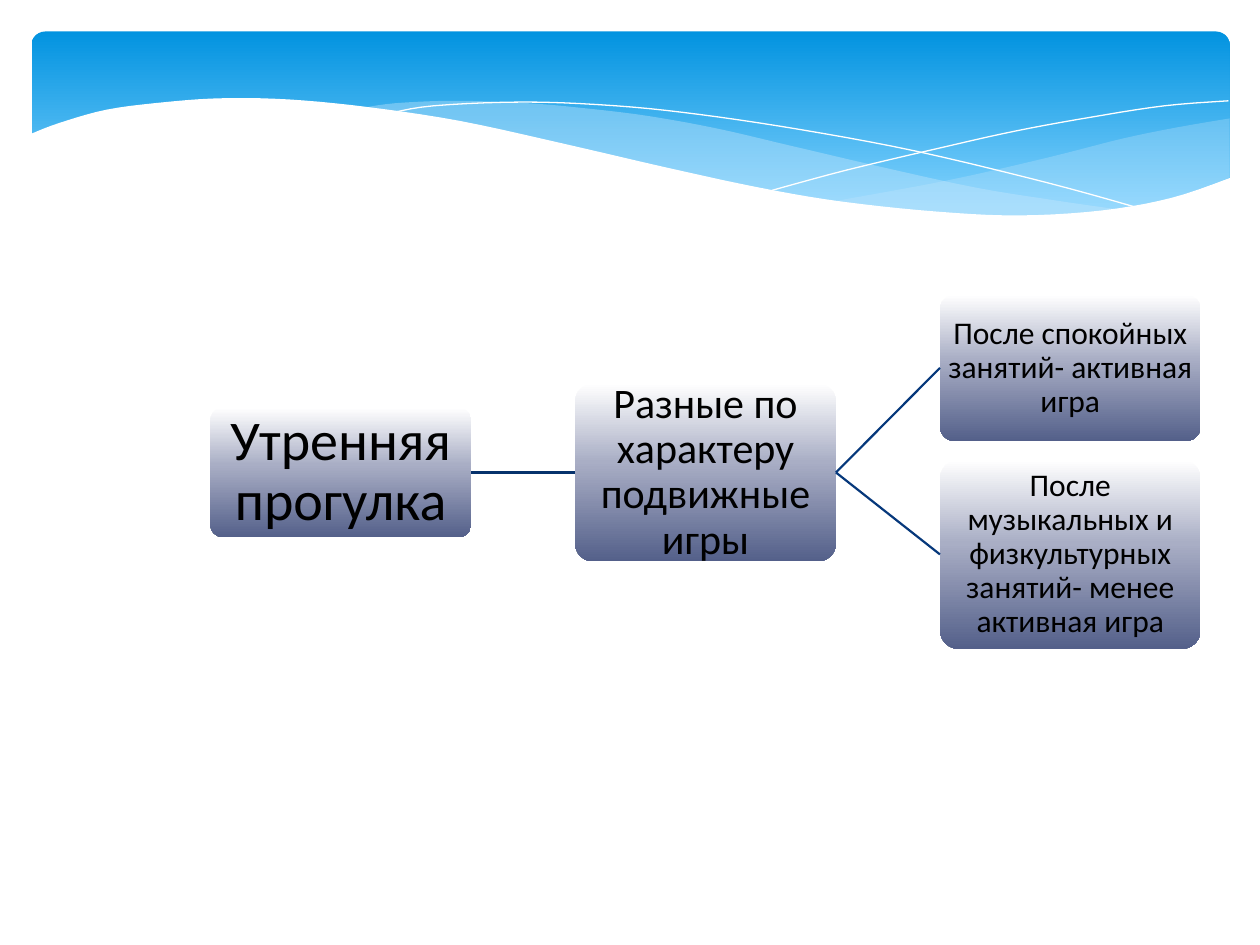
from lxml.etree import SubElement
from pptx import Presentation
from pptx.dml.color import RGBColor
from pptx.enum.shapes import MSO_CONNECTOR, MSO_SHAPE
from pptx.enum.text import MSO_ANCHOR, PP_ALIGN
from pptx.oxml.ns import qn
from pptx.util import Inches, Pt

THEME = {
    "font": "Calibri", "text": "000000", "paper": "FFFFFF", "mist": "C6E7FC",
    "banner": [(0, "0293E0"), (90, "83D3FE")],
    "node": [(0, "FFFFFF"), (44, "A9AEC5"), (100, "54608A")],
    "large": 32, "medium": 24, "small": 18, "link": 1.25, "hairline": 0,
}

NODES = [
    {"text": "Утренняя прогулка", "column": 0, "middle": 3.75, "height": 1.03,
     "size": "large", "inset": 0.02},
    {"text": "Разные по характеру подвижные игры", "column": 1, "middle": 3.75,
     "height": 1.41, "size": "medium", "inset": 0.02},
    {"text": "После спокойных занятий- активная игра", "column": 2, "middle": 2.92,
     "height": 1.16, "size": "small", "inset": 0.01},
    {"text": "После музыкальных и физкультурных занятий- менее активная игра",
     "column": 2, "middle": 4.4, "height": 1.5, "size": "small", "inset": 0.01},
]
LINKS = [(0, 1, "06326C"), (1, 2, "06387B"), (1, 3, "06387B")]
FIRST_LEFT, COLUMN_STEP, NODE_WIDTH = 1.67, 2.895, 2.07

RIGHT_MIST = [
    [(9.76, 0.94), (9.35, 1.01), (8.91, 1.1), (8.32, 1.25), (7.53, 1.43), (6.61, 1.6)],
    [(6.61, 1.6), (7.19, 1.67), (7.81, 1.72), (8.35, 1.72), (8.81, 1.67),
     (9.28, 1.58), (9.76, 1.41)],
]
LEFT_MIST = [
    [(8.93, 1.67), (8.37, 1.59), (7.75, 1.49), (7.06, 1.34), (6.29, 1.16), (5.69, 1.02),
     (5.14, 0.92), (4.65, 0.86), (4.2, 0.82), (3.61, 0.8), (3.13, 0.82), (2.86, 0.86)],
    [(2.86, 0.86), (3.42, 0.94), (4.04, 1.06), (4.91, 1.26), (5.66, 1.43), (6.34, 1.56),
     (6.95, 1.65), (7.48, 1.7), (7.96, 1.73), (8.48, 1.72), (8.93, 1.67)],
]
FALLING_LINE = [
    [(3.09, 0.9), (3.44, 0.84), (4.16, 0.81), (4.89, 0.84), (5.56, 0.91), (6.36, 1.03),
     (7.27, 1.2), (8.31, 1.45), (9.07, 1.66)],
]
RISING_LINE = [
    [(6.13, 1.51), (6.72, 1.35), (7.48, 1.17), (8.06, 1.04), (8.66, 0.93),
     (9.24, 0.84), (9.75, 0.8)],
]
WHITE_WAVE = [
    [(9.77, 1.41), (9.3, 1.57), (8.75, 1.67), (8.09, 1.71), (7.44, 1.68), (6.68, 1.6),
     (6.03, 1.49), (5.29, 1.33), (4.47, 1.14), (3.65, 0.96), (2.92, 0.85), (2.3, 0.79),
     (1.77, 0.78), (1.32, 0.81), (0.85, 0.87), (0.46, 0.98), (0.23, 1.07)],
    [(0.23, 2.24), (9.77, 2.24)],
]
WAVES = [
    {"curves": RIGHT_MIST, "fill": "mist", "opacity": 29},
    {"curves": LEFT_MIST, "fill": "mist", "opacity": 40},
    {"curves": FALLING_LINE, "line": "paper"},
    {"curves": RISING_LINE, "line": "paper"},
    {"curves": WHITE_WAVE, "fill": "paper", "opacity": 100},
]


def smooth(knots, steps=5):
    ends = [knots[0], *knots, knots[-1]]
    points = [knots[0]]
    for a, b, c, d in zip(ends, ends[1:], ends[2:], ends[3:]):
        for step in range(1, steps + 1):
            t = step / steps
            points.append(tuple(
                (2 * q + (r - p) * t + (2 * p - 5 * q + 4 * r - s) * t**2
                 + (3 * q - p - 3 * r + s) * t**3) / 2
                for p, q, r, s in zip(a, b, c, d)))
    return points


def fill_gradient(shape, stops):
    shape.fill.gradient()
    shape.fill.gradient_angle = 270
    stop_list = shape.fill._fill._gradFill.find(qn("a:gsLst"))
    stop_list.clear()
    for position, color in stops:
        stop = SubElement(stop_list, qn("a:gs"), pos=str(position * 1000))
        SubElement(stop, qn("a:srgbClr"), val=color)


def add_rounded(page, left, top, width, height, radius, stops):
    box = page.shapes.add_shape(MSO_SHAPE.ROUNDED_RECTANGLE, Inches(left), Inches(top),
                                Inches(width), Inches(height))
    box.adjustments[0] = radius
    box.shadow.inherit = False
    box.line.fill.background()
    fill_gradient(box, stops)
    return box


def add_wave(page, wave):
    points = [(Inches(x), Inches(y)) for curve in wave["curves"] for x, y in smooth(curve)]
    builder = page.shapes.build_freeform(*points[0])
    builder.add_line_segments(points[1:], close="fill" in wave)
    shape = builder.convert_to_shape()
    shape.shadow.inherit = False
    if "fill" in wave:
        shape.fill.solid()
        shape.fill.fore_color.rgb = RGBColor.from_string(THEME[wave["fill"]])
        color = shape._element.spPr.find(".//" + qn("a:srgbClr"))
        SubElement(color, qn("a:alpha"), val=str(wave["opacity"] * 1000))
        shape.line.fill.background()
    else:
        shape.fill.background()
        shape.line.color.rgb = RGBColor.from_string(THEME[wave["line"]])
        shape.line.width = Pt(THEME["hairline"])


def add_node(page, node):
    left = FIRST_LEFT + node["column"] * COLUMN_STEP
    top = node["middle"] - node["height"] / 2
    box = add_rounded(page, left, top, NODE_WIDTH, node["height"], 0.1, THEME["node"])
    frame = box.text_frame
    frame.word_wrap = True
    frame.vertical_anchor = MSO_ANCHOR.MIDDLE
    frame.margin_left = frame.margin_right = Inches(node["inset"])
    frame.margin_top = frame.margin_bottom = Inches(node["inset"])
    para = frame.paragraphs[0]
    para.alignment = PP_ALIGN.CENTER
    para.line_spacing = 0.9
    span = para.add_run()
    span.text = node["text"]
    span.font.name = THEME["font"]
    span.font.size = Pt(THEME[node["size"]])
    span.font.color.rgb = RGBColor.from_string(THEME["text"])
    return box


def add_link(page, parent, child, color):
    link = page.shapes.add_connector(MSO_CONNECTOR.STRAIGHT, 0, 0, 0, 0)
    link.begin_connect(parent, 3)
    link.end_connect(child, 1)
    link.line.color.rgb = RGBColor.from_string(color)
    link.line.width = Pt(THEME["link"])
    SubElement(link._element.spPr, qn("a:effectLst"))


def main():
    deck = Presentation()
    deck.slide_width, deck.slide_height = Inches(10), Inches(7.5)
    page = deck.slides.add_slide(deck.slide_layouts[6])
    add_rounded(page, 0.25, 0.25, 9.51, 1.56, 0.07, THEME["banner"])
    for wave in WAVES:
        add_wave(page, wave)
    boxes = [add_node(page, node) for node in NODES]
    for parent, child, color in LINKS:
        add_link(page, boxes[parent], boxes[child], color)
    deck.save("out.pptx")


if __name__ == "__main__":
    main()
